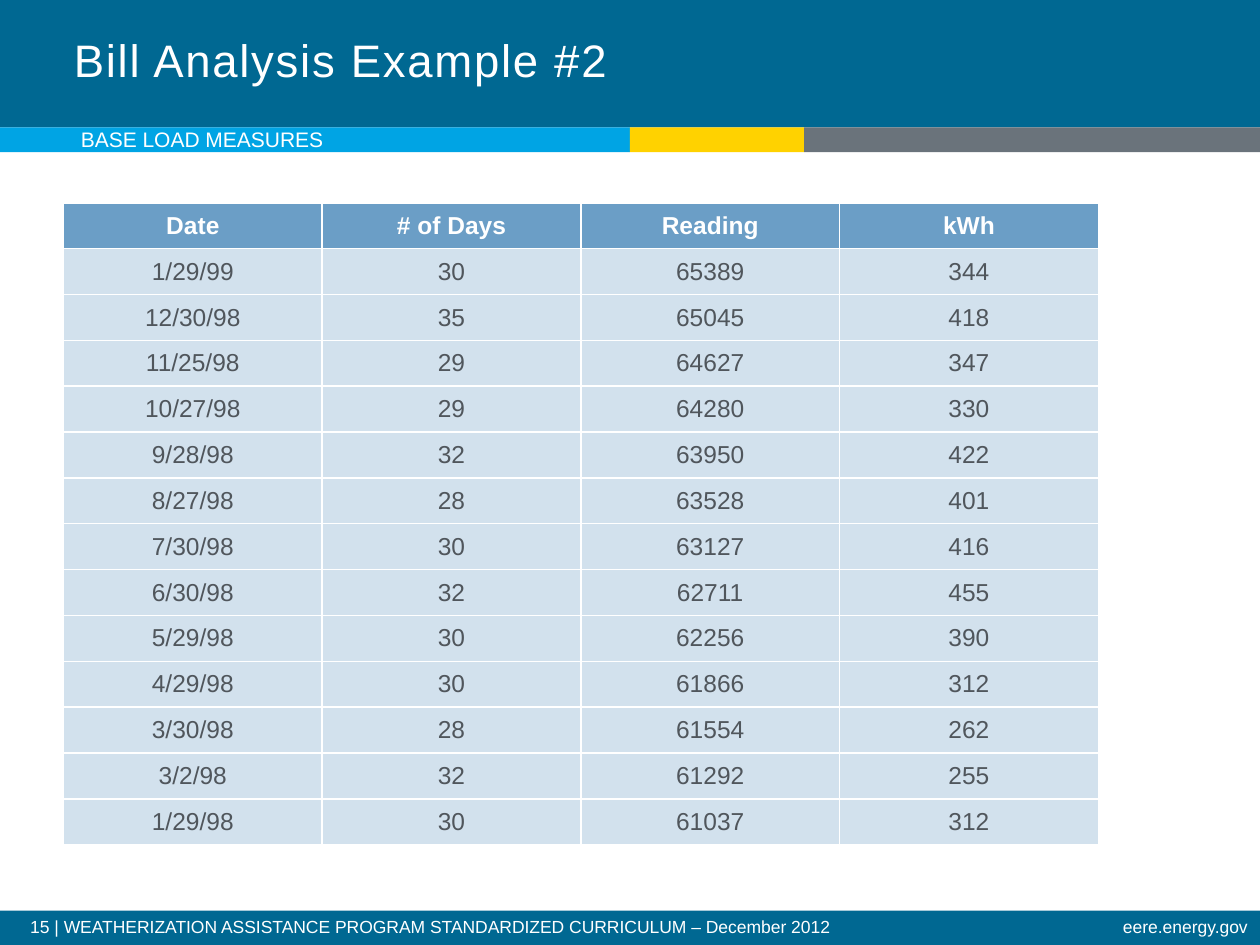
from lxml import etree
from pptx import Presentation
from pptx import util as u
from pptx.dml.color import RGBColor
from pptx.enum import shapes, text
from pptx.oxml.ns import qn

NAVY, SKY, YELLOW, GREY = "006892", "00A4E4", "FFD200", "6A737B"
WHITE, STEEL, INK = "FFFFFF", "6B9EC6", "50565C"

HEADINGS = ("Date", "# of Days", "Reading", "kWh")
BILLS = (
    ("1/29/99", 30, 65389, 344),
    ("12/30/98", 35, 65045, 418),
    ("11/25/98", 29, 64627, 347),
    ("10/27/98", 29, 64280, 330),
    ("9/28/98", 32, 63950, 422),
    ("8/27/98", 28, 63528, 401),
    ("7/30/98", 30, 63127, 416),
    ("6/30/98", 32, 62711, 455),
    ("5/29/98", 30, 62256, 390),
    ("4/29/98", 30, 61866, 312),
    ("3/30/98", 28, 61554, 262),
    ("3/2/98", 32, 61292, 255),
    ("1/29/98", 30, 61037, 312),
)


def paint(fill, color, opacity=100):
    """Fill with a solid hex colour; opacity is in percent."""
    fill.solid()
    fill.fore_color.rgb = RGBColor.from_string(color)
    if opacity < 100:
        for rgb in fill._xPr.iter(qn("a:srgbClr")):
            etree.SubElement(rgb, qn("a:alpha"), val=str(opacity * 1000))


def write(frame, words, font="Arial", size=10, color=WHITE, bold=False,
          align="LEFT", spacing=None, tracking=0):
    paragraph = frame.paragraphs[0]
    paragraph.alignment = getattr(text.PP_ALIGN, align)
    if spacing:
        paragraph.line_spacing = spacing
    run = paragraph.add_run()
    run.text = str(words)
    run.font.name, run.font.size, run.font.bold = font, u.Pt(size), bold
    paint(run.font.fill, color)
    if tracking:
        run.font._element.set("spc", str(tracking * 100))


def outline(cell, color, points):
    properties = cell._tc.get_or_add_tcPr()
    for side in ("lnL", "lnR", "lnT", "lnB"):
        line = etree.SubElement(properties, qn(f"a:{side}"), w=str(u.Pt(points)))
        solid = etree.SubElement(line, qn("a:solidFill"))
        etree.SubElement(solid, qn("a:srgbClr"), val=color)


class SlideBuilder:
    def __init__(self, slide, font="Arial"):
        self.slide = slide
        self.font = font

    def bar(self, left, top, width, height, color):
        bar = self.slide.shapes.add_shape(
            shapes.MSO_SHAPE.RECTANGLE, *map(u.Cm, (left, top, width, height)))
        bar.shadow.inherit = False
        paint(bar.fill, color)
        bar.line.fill.background()

    def label(self, left, top, width, height, words, anchor="TOP", inset=True, **style):
        frame = self.slide.shapes.add_textbox(
            *map(u.Cm, (left, top, width, height))).text_frame
        frame.word_wrap = True
        frame.vertical_anchor = getattr(text.MSO_ANCHOR, anchor)
        if not inset:
            frame.margin_left = frame.margin_right = 0
            frame.margin_top = frame.margin_bottom = 0
        write(frame, words, font=self.font, **style)

    def table(self, left, top, width, height, headings, records):
        rows = (headings, *records)
        grid = self.slide.shapes.add_table(
            len(rows), len(headings), *map(u.Cm, (left, top, width, height))).table
        for row_number, values in enumerate(rows):
            heading = row_number == 0
            for column_number, value in enumerate(values):
                cell = grid.cell(row_number, column_number)
                cell.vertical_anchor = text.MSO_ANCHOR.MIDDLE
                outline(cell, WHITE, 1)
                paint(cell.fill, STEEL, 100 if heading else 30)
                write(cell.text_frame, value, font=self.font, size=14, bold=heading,
                      color=WHITE if heading else INK, align="CENTER")


def main():
    deck = Presentation()
    deck.slide_width, deck.slide_height = u.Cm(25.4), u.Cm(19.05)
    page = SlideBuilder(deck.slides.add_slide(deck.slide_layouts[6]))

    page.bar(0, 0, 25.4, 2.57, NAVY)
    page.bar(0, 18.36, 25.4, 0.69, NAVY)
    left = 0
    for width, color in ((12.7, SKY), (3.51, YELLOW), (9.19, GREY)):
        page.bar(left, 2.57, width, 0.5, color)
        left += width

    page.label(0.36, 18.39, 20.24, 0.66,
               "15 | WEATHERIZATION ASSISTANCE PROGRAM STANDARDIZED CURRICULUM – December 2012",
               spacing=0.9)
    page.label(15.21, 18.39, 10.19, 0.66, "eere.energy.gov", align="RIGHT", spacing=0.9)
    page.label(1.24, 0.08, 15.04, 2.34, "Bill Analysis Example #2", anchor="MIDDLE",
               size=26, spacing=u.Pt(28), tracking=1)
    page.table(1.28, 4.09, 20.86, 12.94, HEADINGS, BILLS)
    page.label(1.63, 2.49, 17.58, 0.64, "BASE LOAD MEASURES", anchor="MIDDLE",
               inset=False, size=12)

    deck.save("out.pptx")


if __name__ == "__main__":
    main()
